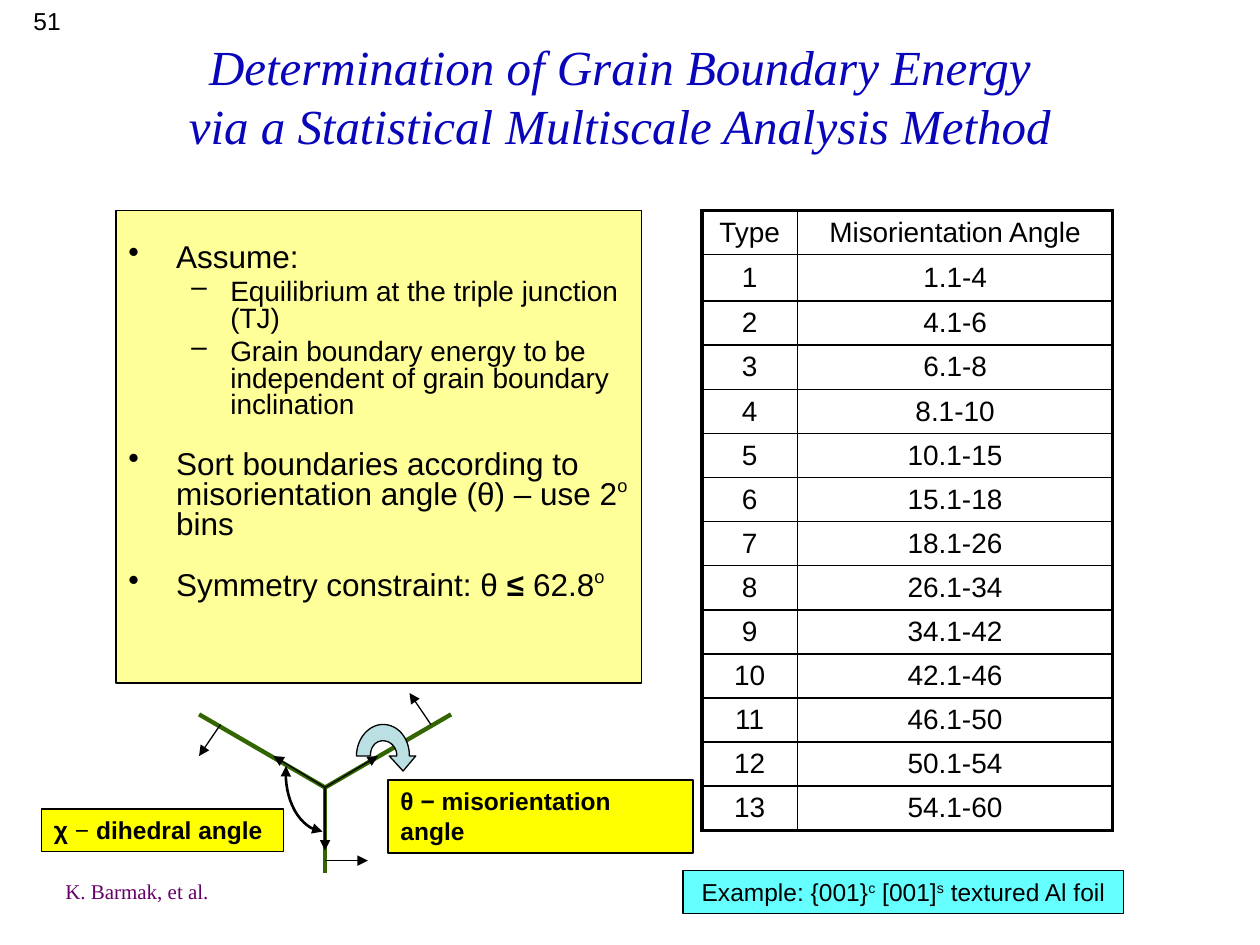
import pptx
import pptx.util
import pptx.dml.color
import pptx.enum.shapes
import pptx.enum.text
import pptx.oxml
import pptx.oxml.ns
from lxml import etree

Inches, Pt = pptx.util.Inches, pptx.util.Pt
RGB = pptx.dml.color.RGBColor
ALIGN = pptx.enum.text.PP_ALIGN
MID = pptx.enum.text.MSO_ANCHOR.MIDDLE
TOP = pptx.enum.text.MSO_ANCHOR.TOP
RECT = pptx.enum.shapes.MSO_SHAPE.RECTANGLE
LINE = pptx.enum.shapes.MSO_CONNECTOR.STRAIGHT
qn = pptx.oxml.ns.qn

BLACK = RGB(0, 0, 0)
BLUE = RGB(0x08, 0x05, 0xBA)
CREAM = RGB(0xFF, 0xFF, 0x99)
YELLOW = RGB(0xFF, 0xFF, 0)
CYAN = RGB(0x66, 0xFF, 0xFF)
PALE = RGB(0xBB, 0xE0, 0xE3)
GREEN = RGB(0x33, 0x66, 0)
PURPLE = RGB(0x66, 0, 0x66)
SERIF = "Times New Roman"

# Content: a run is (text, style), style being "", "b" or a raised baseline
TITLE = "Determination of Grain Boundary Energy\vvia a Statistical Multiscale Analysis Method"
# level, space before, runs
POINTS = [
    (0, 0, [("Assume:", "")]),
    (1, 3.2, [("Equilibrium at the triple junction (TJ)", "")]),
    (1, 3.2, [("Grain boundary energy to be independent of grain boundary inclination", "")]),
    (0, 17.5, [("Sort boundaries according to misorientation angle (θ) – use 2", ""),
               ("o", "40000"), (" bins", "")]),
    (0, 17.5, [("Symmetry constraint: θ ", ""), ("≤ ", "b"), ("62.8", ""), ("o", "40000")]),
]
# bullet, size, margin, hang
LEVELS = [("•", 18, 0.38, 0.38), ("–", 16, 0.81, 0.31)]
HEADS = ("Type", "Misorientation Angle")
ANGLES = ["1.1-4", "4.1-6", "6.1-8", "8.1-10", "10.1-15", "15.1-18", "18.1-26",
          "26.1-34", "34.1-42", "42.1-46", "46.1-50", "50.1-54", "54.1-60"]
# box, fill, alignment, runs
LABELS = [
    ((3.08, 6.19, 2.42, 0.58), YELLOW, ALIGN.LEFT, [("θ − misorientation angle", "b")]),
    ((0.33, 6.42, 1.92, 0.34), YELLOW, ALIGN.LEFT,
     [("χ ", "b"), ("− ", ""), ("dihedral angle", "b")]),
    ((5.42, 6.91, 3.5, 0.34), CYAN, ALIGN.CENTER,
     [("Example: {001}", ""), ("c", "30000"), (" [001]", ""), ("s", "30000"),
      (" textured Al foil", "")]),
]
# Triple junction
HUB = (2.58, 6.25)
EDGES = [(1.58, 5.67), (3.58, 5.67), (2.58, 6.93)]
ARROWS = [((1.75, 5.75), (1.58, 6)), ((3.42, 5.75), (3.25, 5.5)),
          ((2.58, 6.83), (2.92, 6.83)),
          (HUB, (3, 6)), (HUB, (2.58, 6.75)), (HUB, (2.17, 6))]
# Outlines: a pair is a corner, three pairs are a curve
TURN = [(3.15, 6), ((3.15, 5.93), (3.1, 5.88), (3.04, 5.88)),
        ((2.98, 5.88), (2.94, 5.93), (2.94, 6)), (2.83, 6),
        ((2.83, 5.86), (2.93, 5.75), (3.04, 5.75)),
        ((3.16, 5.75), (3.25, 5.86), (3.25, 6)), (3.3, 6), (3.2, 6.12), (3.09, 6)]
ARC = [(2.56, 6.6), ((2.38, 6.58), (2.25, 6.35), (2.27, 6.08))]

deck = pptx.Presentation()
deck.slide_width, deck.slide_height = Inches(10), Inches(7.5)
slide = deck.slides.add_slide(deck.slide_layouts[6])
shapes = slide.shapes


def style(para, size, color=BLACK, face="Arial", align=ALIGN.LEFT):
    para.alignment = align
    para.font.size, para.font.name = Pt(size), face
    para.font.color.rgb = color


def write(para, runs):
    for words, look in runs:
        run = para.add_run()
        run.text = words
        if look == "b":
            run.font.bold = True
        elif look:
            run._r.get_or_add_rPr().set("baseline", look)


def text(box, words, size, color, face, align, wrap=True):
    frame = shapes.add_textbox(*map(Inches, box)).text_frame
    frame.word_wrap = wrap
    para = frame.paragraphs[0]
    para.text = words
    style(para, size, color, face, align)
    return frame


def paint(shape, fill, width=0.75):
    shape.shadow.inherit = False
    if fill is None:
        shape.fill.background()
    else:
        shape.fill.solid()
        shape.fill.fore_color.rgb = fill
    shape.line.color.rgb, shape.line.width = BLACK, Pt(width)


def panel(box, fill):
    shape = shapes.add_shape(RECT, *map(Inches, box))
    paint(shape, fill)
    frame = shape.text_frame
    frame.word_wrap, frame.vertical_anchor = True, TOP
    return frame


def tip(shape, *ends):
    ln = shape.line._get_or_add_ln()
    for end in ends:
        etree.SubElement(ln, qn("a:" + end), type="triangle")


def link(start, end, color, width):
    line = shapes.add_connector(LINE, *map(Inches, start + end))
    line.line.color.rgb, line.line.width = color, Pt(width)
    etree.SubElement(line._element.spPr, qn("a:effectLst"))
    return line


def trace(parts, close, steps=16):
    dots = [parts[0]]
    for part in parts[1:]:
        if len(part) == 2:
            dots.append(part)
            continue
        curve = (dots[-1],) + part
        for i in range(1, steps + 1):
            t = i / steps
            w = ((1 - t) ** 3, 3 * t * (1 - t) ** 2, 3 * t * t * (1 - t), t ** 3)
            dots.append(tuple(sum(k * p[a] for k, p in zip(w, curve)) for a in (0, 1)))
    # The builder rounds to whole units, so points go in as EMU
    dots = [(Inches(x), Inches(y)) for x, y in dots]
    pen = shapes.build_freeform(*dots[0], scale=1.0)
    pen.add_line_segments(dots[1:], close=close)
    return pen.convert_to_shape()


# Slide number and title
text((0, 0, 0.58, 0.33), "51", 14, BLACK, "Arial", ALIGN.RIGHT)
head = text((0.67, 0.17, 8.5, 1.17), TITLE, 28, BLUE, SERIF, ALIGN.CENTER)
head.vertical_anchor = MID
head.paragraphs[0].font.italic = True

# Assumptions
frame = panel((0.92, 1.67, 4.17, 3.75), CREAM)
frame.margin_top = Inches(0.27)
for i, (level, gap, runs) in enumerate(POINTS):
    para = frame.add_paragraph() if i else frame.paragraphs[0]
    mark, size, left, hang = LEVELS[level]
    para.level, para.line_spacing = level, 0.8
    if gap:
        para.space_before = Pt(gap)
    props = para._p.get_or_add_pPr()
    props.set("marL", str(Inches(left)))
    props.set("indent", str(-Inches(hang)))
    etree.SubElement(props, qn("a:buChar"), char=mark)
    style(para, size)
    write(para, runs)

# Table of angle bins
rows = [HEADS] + [(str(n), angle) for n, angle in enumerate(ANGLES, 1)]
last = len(rows) - 1
grid = shapes.add_table(len(rows), 2, Inches(5.57), Inches(1.67),
                        Inches(3.26), Inches(4.88)).table
grid.first_row = grid.horz_banding = False
grid.columns[0].width, grid.columns[1].width = Inches(0.76), Inches(2.5)
for r, row in enumerate(rows):
    grid.rows[r].height = Inches(0.37 if r == 1 else 0.35)
    for c, words in enumerate(row):
        cell = grid.cell(r, c)
        cell.margin_top = cell.margin_bottom = Inches(0.04)
        cell.vertical_anchor = MID
        para = cell.text_frame.paragraphs[0]
        para.text = words
        style(para, 16, align=ALIGN.CENTER)
        outer = {"L": c == 0, "R": c == 1, "T": r == 0, "B": r == last}
        for side, thick in outer.items():
            ln = etree.SubElement(cell._tc.get_or_add_tcPr(), qn("a:ln" + side),
                                  w=str(Pt(2.25 if thick else 1)))
            ink = etree.SubElement(ln, qn("a:solidFill"))
            etree.SubElement(ink, qn("a:srgbClr"), val=str(BLACK))
        cell.fill.background()

# Grain boundaries
for edge in EDGES:
    link(HUB, edge, GREEN, 2.5)

# Labels
for box, fill, align, runs in LABELS:
    para = panel(box, fill).paragraphs[0]
    style(para, 14, align=align)
    write(para, runs)

# Arrows
for start, end in ARROWS:
    tip(link(start, end, BLACK, 0.75), "tailEnd")
paint(trace(TURN, True), PALE)
arc = trace(ARC, False)
paint(arc, None, 1.5)
tip(arc, "headEnd", "tailEnd")

# Credit
text((0.42, 6.92, 1.34, 0.3), "K. Barmak, et al.", 12, PURPLE, SERIF, ALIGN.LEFT, False)

deck.save("out.pptx")
